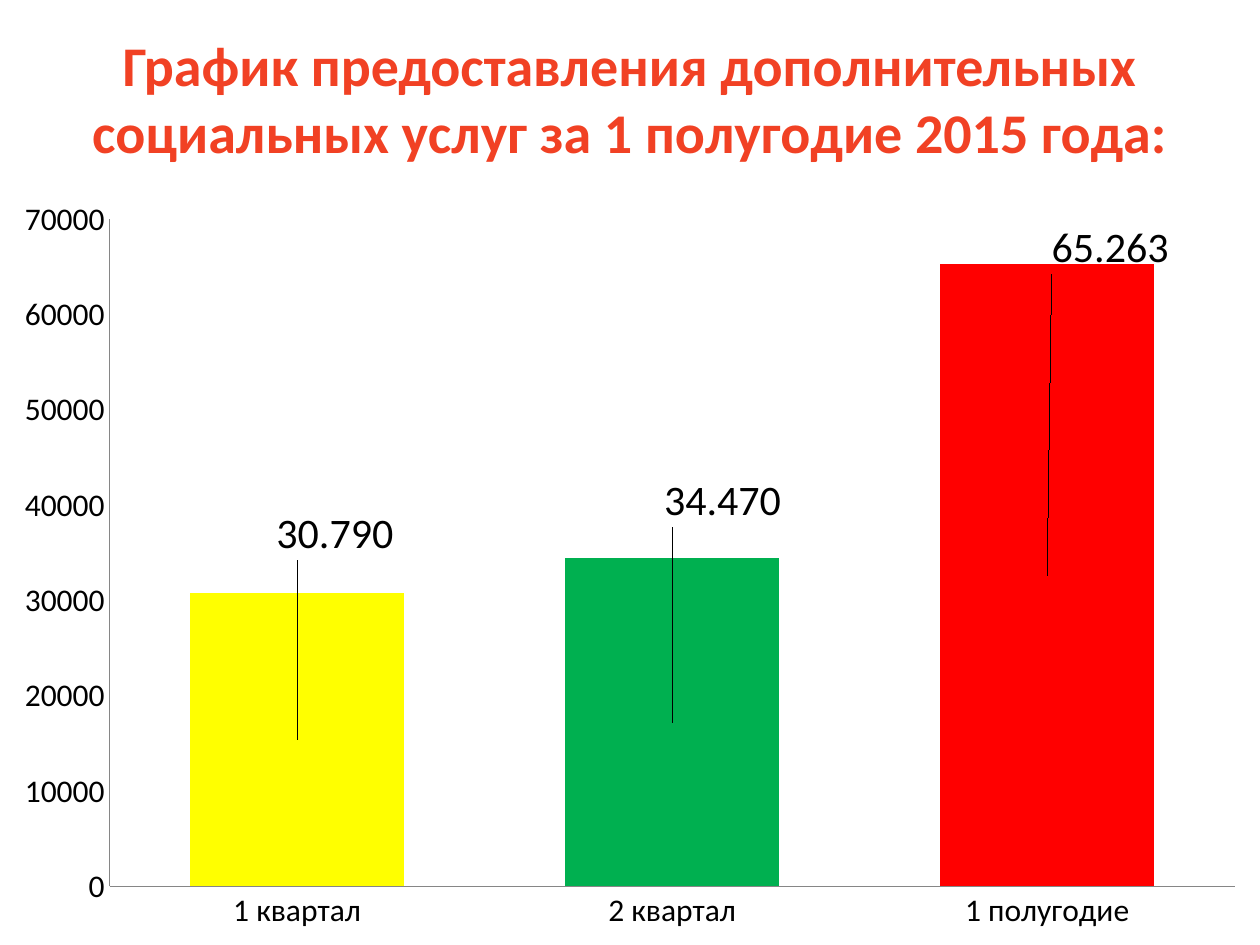
from dataclasses import dataclass

from lxml import etree
from pptx import Presentation
from pptx import util as u
from pptx.chart import data as chart_data
from pptx.dml.color import RGBColor
from pptx.enum import chart as charts, text
from pptx.oxml import ns

TITLE_COLOR = RGBColor(0xF1, 0x41, 0x24)
SERIES_COLOR = RGBColor(0x4F, 0x81, 0xBD)
AXIS_COLOR = RGBColor(0x86, 0x86, 0x86)
BLACK = RGBColor(0, 0, 0)
YELLOW = RGBColor(0xFF, 0xFF, 0)
GREEN = RGBColor(0, 0xB0, 0x50)
RED = RGBColor(0xFF, 0, 0)
FONT = "Calibri"


@dataclass
class Bar:
    category: str
    value: int
    label: str
    color: RGBColor
    label_shift: tuple[float, float]  # fractions of the chart size


BARS = [
    Bar("1 квартал", 30790, "30.790", YELLOW, (0.03, -0.27)),
    Bar("2 квартал", 34470, "34.470", GREEN, (0.04, -0.29)),
    Bar("1 полугодие", 65263, "65.263", RED, (0.05, -0.43)),
]


def style_font(font, size: float, color: RGBColor, bold: bool = False) -> None:
    font.name = FONT
    font.size = u.Pt(size)
    font.bold = bold
    font.color.rgb = color


def manual_layout(**settings: object) -> etree._Element:
    layout = etree.Element(ns.qn("c:layout"))
    manual = etree.SubElement(layout, ns.qn("c:manualLayout"))
    for name, value in settings.items():
        etree.SubElement(manual, ns.qn(f"c:{name}")).set("val", str(value))
    return layout


def style_axis(axis) -> None:
    axis.major_tick_mark = axis.minor_tick_mark = charts.XL_TICK_MARK.NONE
    axis.has_major_gridlines = False
    axis.format.line.color.rgb = AXIS_COLOR
    axis.format.line.width = u.Pt(0.75)


def style_bar(series, index: int, bar: Bar) -> None:
    point = series.points[index]
    point.format.fill.solid()
    point.format.fill.fore_color.rgb = bar.color
    paragraph = point.data_label.text_frame.paragraphs[0]
    run = paragraph.add_run()
    run.text = bar.label
    style_font(run.font, 24, BLACK)
    # Move the label away from the middle of its bar
    x, y = bar.label_shift
    label = series._element.xpath(f"c:dLbls/c:dLbl[c:idx/@val='{index}']")[0]
    label.find(ns.qn("c:idx")).addnext(manual_layout(x=x, y=y))


def add_bar_chart(slide) -> None:
    data = chart_data.CategoryChartData()
    data.categories = [bar.category for bar in BARS]
    data.add_series("Series 1", [bar.value for bar in BARS])
    chart = slide.shapes.add_chart(
        charts.XL_CHART_TYPE.COLUMN_STACKED,
        u.Cm(0), u.Cm(3.73), u.Cm(25.4), u.Cm(15.32), data).chart
    chart.has_legend = False
    chart.has_title = False
    style_font(chart.font, 18, BLACK)

    # Plot area and axes
    for old_layout in chart._chartSpace.xpath("c:chart/c:plotArea/c:layout"):
        old_layout.getparent().remove(old_layout)
    plot_area = chart._chartSpace.xpath("c:chart/c:plotArea")[0]
    plot_area.insert(0, manual_layout(
        layoutTarget="inner", xMode="edge", yMode="edge",
        x=0.087, y=0.045, w=0.893, h=0.878))
    style_axis(chart.category_axis)
    style_axis(chart.value_axis)
    chart.value_axis.minimum_scale = 0
    chart.value_axis.maximum_scale = 70000
    chart.value_axis.major_unit = 10000

    # Bars and their labels
    plot = chart.plots[0]
    plot.gap_width = 75
    plot.overlap = 100
    plot.vary_by_categories = False
    series = plot.series[0]
    series.format.fill.solid()
    series.format.fill.fore_color.rgb = SERIES_COLOR
    series.data_labels.show_value = True
    for index, bar in enumerate(BARS):
        style_bar(series, index, bar)


def add_title(slide) -> None:
    title = slide.shapes.title
    title.left, title.top, title.width, title.height = (
        u.Cm(0), u.Cm(0), u.Cm(25.4), u.Cm(3.94))
    title.text_frame.text = ("График предоставления дополнительных "
                             "социальных услуг за 1 полугодие 2015 года:")
    title.text_frame.vertical_anchor = text.MSO_ANCHOR.MIDDLE
    paragraph = title.text_frame.paragraphs[0]
    paragraph.alignment = text.PP_ALIGN.CENTER
    style_font(paragraph.font, 32, TITLE_COLOR, bold=True)


def main() -> None:
    presentation = Presentation()
    presentation.slide_width = u.Cm(25.4)
    presentation.slide_height = u.Cm(19.05)
    slide = presentation.slides.add_slide(presentation.slide_layouts[5])
    add_title(slide)
    add_bar_chart(slide)
    presentation.save("out.pptx")


if __name__ == "__main__":
    main()
